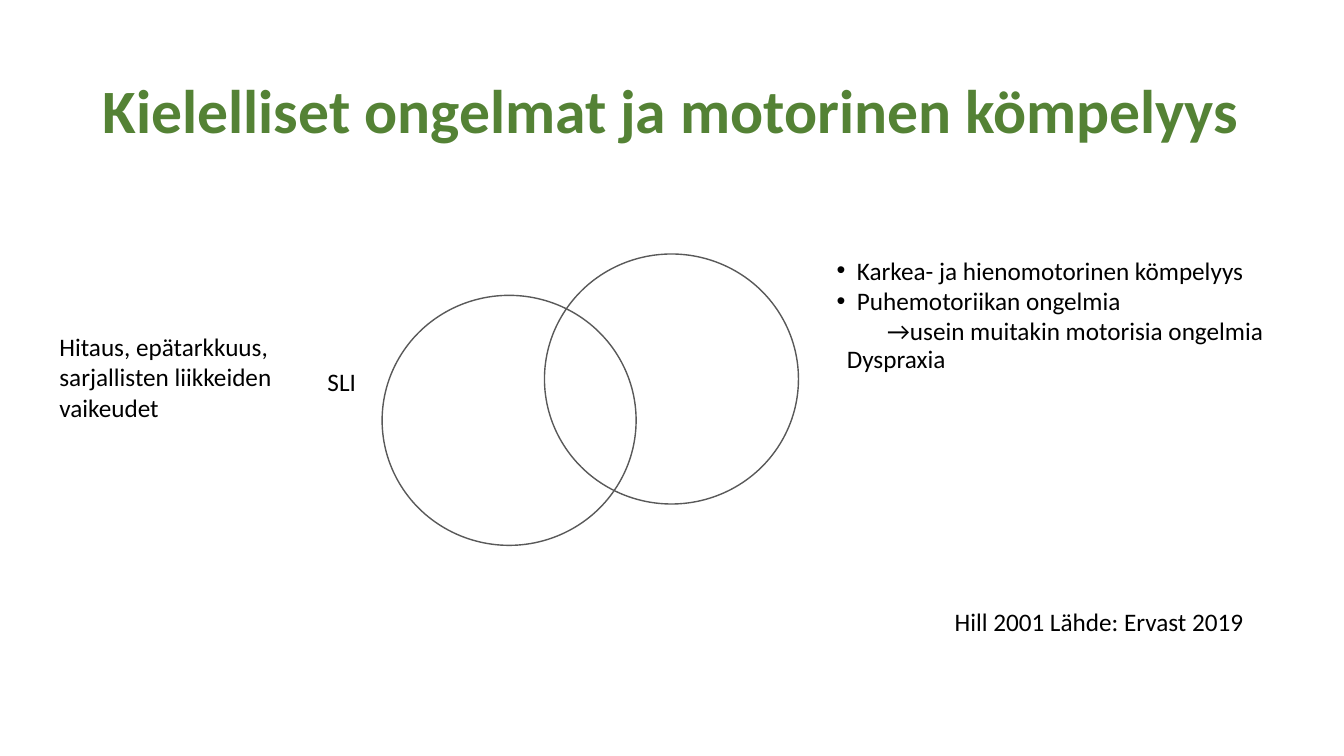
import pptx
import pptx.dml.color
import pptx.enum.shapes
import pptx.enum.text
import pptx.oxml.ns
import pptx.util
from lxml import etree

COLORS = {"title": "548235", "text": "000000", "outline": "595959"}
FONT = "Calibri"
SLIDE_W = pptx.util.Inches(13.33)
SLIDE_H = pptx.util.Inches(7.5)


def share(left, top, width, height):
    """Turn percentages of the slide's size into a position and size."""
    return (int(SLIDE_W * left / 100), int(SLIDE_H * top / 100),
            int(SLIDE_W * width / 100), int(SLIDE_H * height / 100))


def rgb(name):
    return pptx.dml.color.RGBColor.from_string(COLORS[name])


def indent(p, left, hanging=0, bullet=None):
    """Set the paragraph's indents in inches and its bullet character."""
    pPr = p._p.get_or_add_pPr()
    pPr.set("marL", str(pptx.util.Inches(left)))
    pPr.set("indent", str(-pptx.util.Inches(hanging)))
    if bullet:
        qn = pptx.oxml.ns.qn
        etree.SubElement(pPr, qn("a:buFont"), typeface="Arial")
        etree.SubElement(pPr, qn("a:buChar"), char=bullet)


def write(p, text, size=18, color="text", bold=False, line_spacing=None):
    r = p.add_run()
    r.text = text
    r.font.name = FONT
    r.font.size = pptx.util.Pt(size)
    r.font.bold = bold
    r.font.color.rgb = rgb(color)
    p.alignment = pptx.enum.text.PP_ALIGN.LEFT
    if line_spacing:
        p.line_spacing = line_spacing


def add_title(s, text, box):
    sp = s.shapes.title
    sp.left, sp.top, sp.width, sp.height = share(*box)
    tf = sp.text_frame
    tf.auto_size = pptx.enum.text.MSO_AUTO_SIZE.NONE
    tf.vertical_anchor = pptx.enum.text.MSO_ANCHOR.MIDDLE
    write(tf.paragraphs[0], text, size=44, color="title", bold=True,
          line_spacing=0.9)


def add_text(s, lines, box, grow=True):
    """Add a text box with one paragraph per line and return its paragraphs."""
    tf = s.shapes.add_textbox(*share(*box)).text_frame
    tf.word_wrap = True
    if grow:
        tf.auto_size = pptx.enum.text.MSO_AUTO_SIZE.SHAPE_TO_FIT_TEXT
    for i, line in enumerate(lines):
        write(tf.add_paragraph() if i else tf.paragraphs[0], line)
    return tf.paragraphs


def add_circle(s, left, top):
    sp = s.shapes.add_shape(pptx.enum.shapes.MSO_SHAPE.OVAL,
                            *share(left, top, 18.9, 33.07))
    sp.shadow.inherit = False
    sp.fill.background()
    sp.line.color.rgb = rgb("outline")
    sp.line.width = pptx.util.Pt(1)


def main():
    prs = pptx.Presentation()
    prs.slide_width, prs.slide_height = SLIDE_W, SLIDE_H
    s = prs.slides.add_slide(prs.slide_layouts.get_by_name("Title Only"))

    add_title(s, "Kielelliset ongelmat ja motorinen kömpelyys",
              (6.9, 5.33, 86.27, 19.33))
    add_text(s, ["Hill 2001 Lähde: Ervast 2019"],
             (70.29, 79.6, 23.71, 5.33), grow=False)
    add_text(s, ["Hitaus, epätarkkuus,", "sarjallisten liikkeiden", "vaikeudet"],
             (3.68, 43.2, 20.03, 13.47))
    add_text(s, ["SLI"], (23.63, 47.73, 4.43, 5.33))

    *bullets, consequence = add_text(
        s, ["Karkea- ja hienomotorinen kömpelyys", "Puhemotoriikan ongelmia",
            "→usein muitakin motorisia ongelmia"],
        (61.52, 33.07, 34.81, 13.47))
    for p in bullets:
        indent(p, 0.2, hanging=0.2, bullet="•")
    consequence.level = 1
    indent(consequence, 0.5)

    add_text(s, ["Dyspraxia"], (62.27, 44.8, 16.05, 5.33))
    for left, top in ((40.51, 33.6), (28.43, 39.07)):
        add_circle(s, left, top)

    prs.save("out.pptx")


if __name__ == "__main__":
    main()
